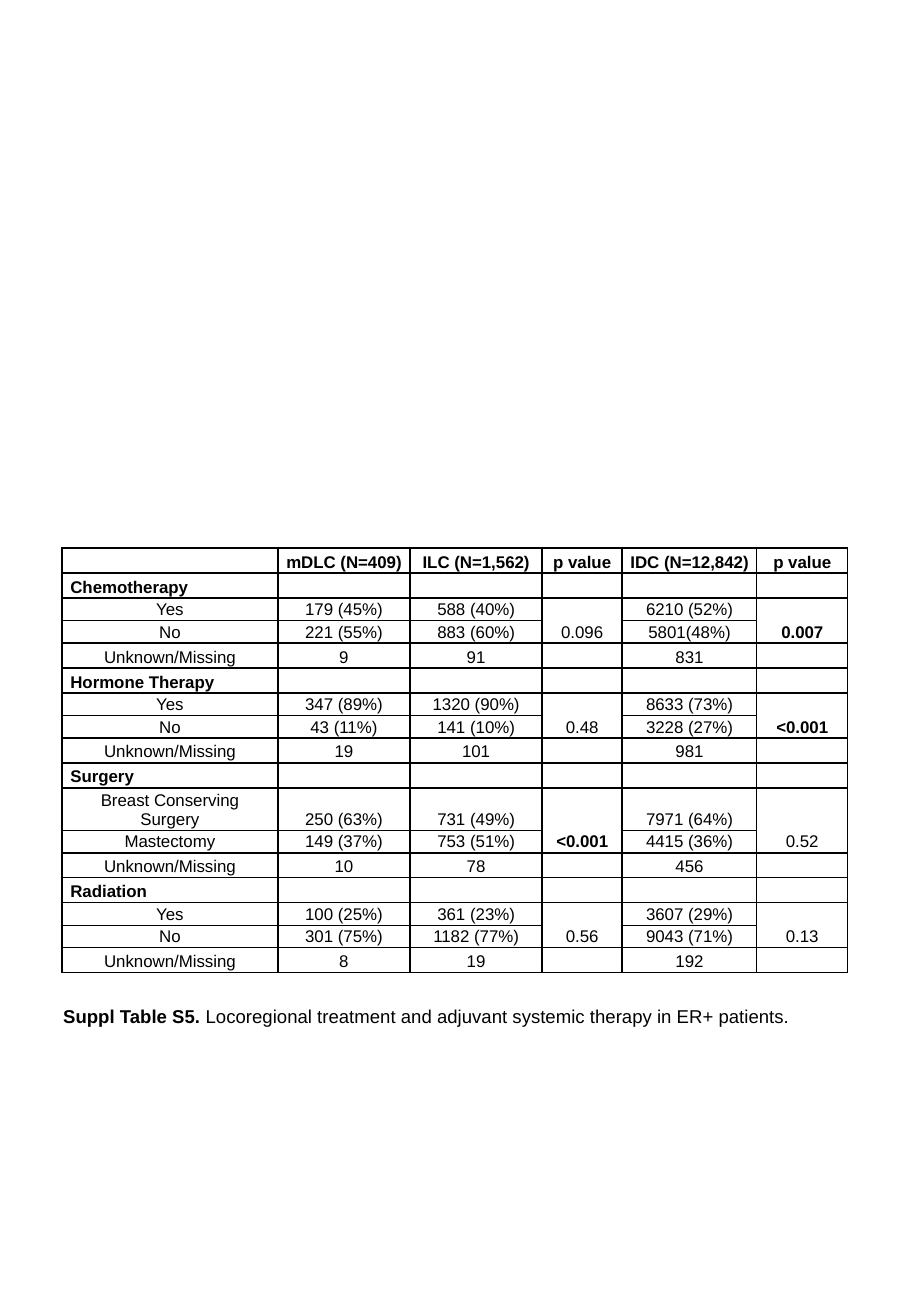
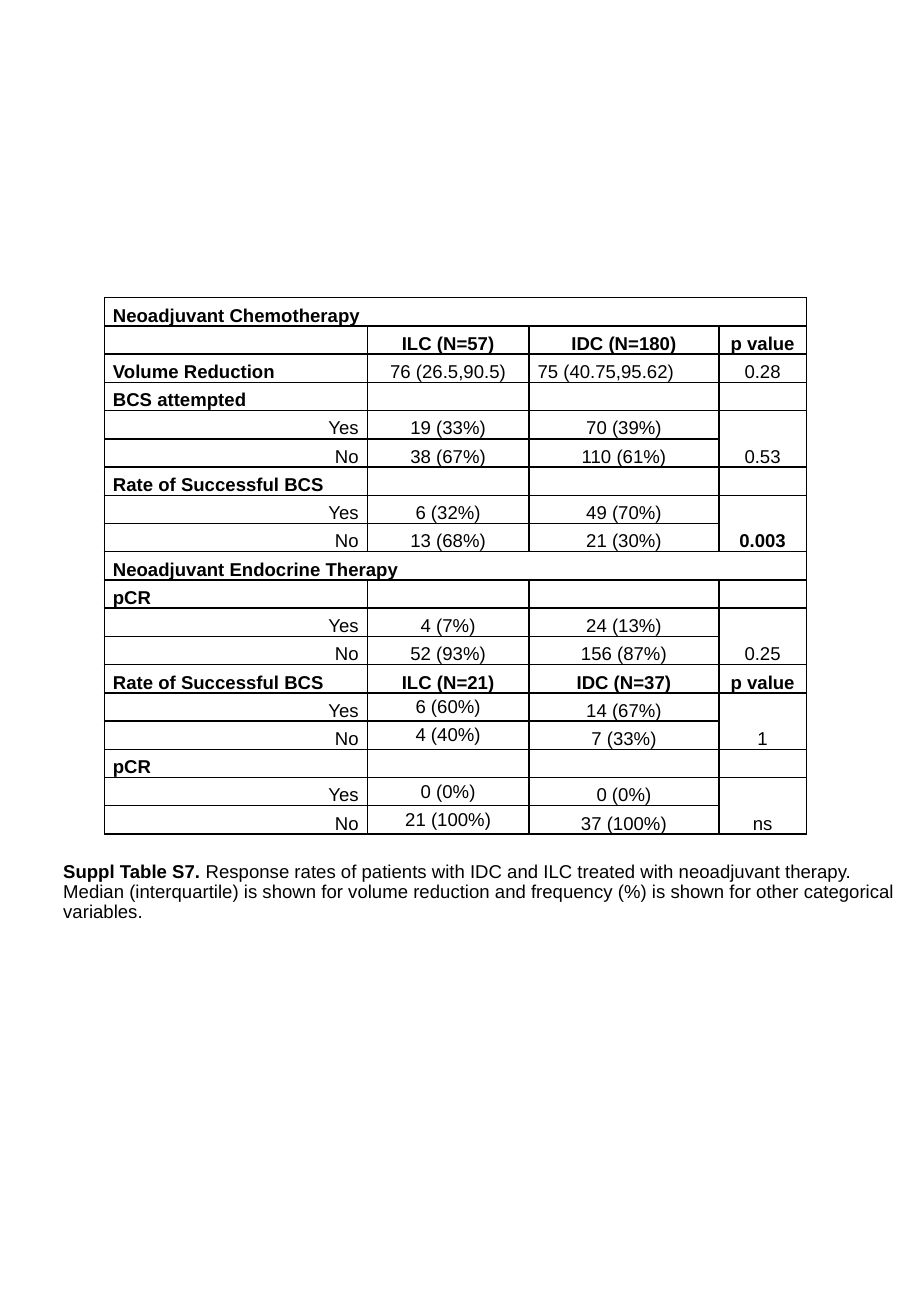
from lxml.etree import SubElement
from pptx import Presentation
from pptx.dml.color import RGBColor
from pptx.enum.text import MSO_ANCHOR as ANCHOR, MSO_AUTO_SIZE as AUTO_SIZE, PP_ALIGN as ALIGN
from pptx.oxml import parse_xml
from pptx.oxml.ns import nsdecls, qn
from pptx.util import Inches, Pt

FONT = "Arial"
INK = "000000"
BORDER = 1
CAPTION_SIZE = 11
LABEL_INSET = 0.07
VALUE_INSET = 0.06
TITLE_ONLY = 5

# In the rows below, "*" starts a bold cell and None joins a cell to the one
# above, or to the one on its left where the whole row is joined.
TREATMENT_HEAD = ["", "*mDLC (N=409)", "*ILC (N=1,562)", "*p value", "*IDC (N=12,842)", "*p value"]
TREATMENT_GROUPS = {
    "Chemotherapy": [
        ["Yes", "179 (45%)", "588 (40%)", "0.096", "6210 (52%)", "*0.007"],
        ["No", "221 (55%)", "883 (60%)", None, "5801(48%)", None],
        ["Unknown/Missing", "9", "91", "", "831", ""],
    ],
    "Hormone Therapy": [
        ["Yes", "347 (89%)", "1320 (90%)", "0.48", "8633 (73%)", "*<0.001"],
        ["No", "43 (11%)", "141 (10%)", None, "3228 (27%)", None],
        ["Unknown/Missing", "19", "101", "", "981", ""],
    ],
    "Surgery": [
        ["Breast Conserving Surgery", "250 (63%)", "731 (49%)", "*<0.001", "7971 (64%)", "0.52"],
        ["Mastectomy", "149 (37%)", "753 (51%)", None, "4415 (36%)", None],
        ["Unknown/Missing", "10", "78", "", "456", ""],
    ],
    "Radiation": [
        ["Yes", "100 (25%)", "361 (23%)", "0.56", "3607 (29%)", "0.13"],
        ["No", "301 (75%)", "1182 (77%)", None, "9043 (71%)", None],
        ["Unknown/Missing", "8", "19", "", "192", ""],
    ],
}
RESPONSE_ROWS = [
    ["*Neoadjuvant Chemotherapy", None, None, None],
    ["", "*ILC (N=57)", "*IDC (N=180)", "*p value"],
    ["*Volume Reduction", "76 (26.5,90.5)", "75 (40.75,95.62)", "0.28"],
    ["*BCS attempted", "", "", ""],
    ["Yes", "19 (33%)", "70 (39%)", "0.53"],
    ["No", "38 (67%)", "110 (61%)", None],
    ["*Rate of Successful BCS", "", "", ""],
    ["Yes", "6 (32%)", "49 (70%)", "*0.003"],
    ["No", "13 (68%)", "21 (30%)", None],
    ["*Neoadjuvant Endocrine Therapy", None, None, None],
    ["*pCR", "", "", ""],
    ["Yes", "4 (7%)", "24 (13%)", "0.25"],
    ["No", "52 (93%)", "156 (87%)", None],
    ["*Rate of Successful BCS", "*ILC (N=21)", "*IDC (N=37)", "*p value"],
    ["Yes", "6 (60%)", "14 (67%)", "1"],
    ["No", "4 (40%)", "7 (33%)", None],
    ["*pCR", "", "", ""],
    ["Yes", "0 (0%)", "0 (0%)", "ns"],
    ["No", "21 (100%)", "37 (100%)", None],
]


def color(hex_code):
    return RGBColor.from_string(hex_code)


def add_text(para, text, size=CAPTION_SIZE, bold=False, align=ALIGN.LEFT):
    para.alignment = align
    span = para.add_run()
    span.text = text
    span.font.name = FONT
    span.font.size = Pt(size)
    span.font.bold = bold
    span.font.color.rgb = color(INK)


def add_caption(page, top, label, text):
    box = page.shapes.title
    box.left, box.top, box.width, box.height = map(Inches, (0.42, top, 7.08, 0.63))
    frame = box.text_frame
    frame.word_wrap = True
    frame.auto_size = AUTO_SIZE.NONE
    frame.vertical_anchor = ANCHOR.TOP
    para = frame.paragraphs[0]
    para.line_spacing = 0.9
    add_text(para, label, bold=True)
    add_text(para, text)


def set_borders(cell):
    props = cell._tc.get_or_add_tcPr()
    for position, side in enumerate("LRTB"):
        props.insert(position, parse_xml(
            f'<a:ln{side} {nsdecls("a")} w="{Pt(BORDER)}"><a:solidFill>'
            f'<a:srgbClr val="{INK}"/></a:solidFill></a:ln{side}>'))


def fill_cell(cell, text, size, inset, label_align, is_label):
    cell.fill.background()
    cell.vertical_anchor = ANCHOR.BOTTOM
    cell.margin_left = cell.margin_right = Inches(LABEL_INSET if is_label else VALUE_INSET)
    cell.margin_top = cell.margin_bottom = Inches(inset)
    set_borders(cell)
    para = cell.text_frame.paragraphs[0]
    if text:
        bold = text.startswith("*")
        align = ALIGN.CENTER
        if is_label:
            align = ALIGN.LEFT if bold else label_align
        add_text(para, text.removeprefix("*"), size, bold, align)
    else:
        SubElement(para._p, qn("a:endParaRPr"), sz=str(size * 100))


def add_grid(page, box, rows, widths, weights, size, inset, label_align):
    """Draw a bordered table whose row heights share the box by weight."""
    left, top, width, height = box
    frame = page.shapes.add_table(len(rows), len(widths), *map(Inches, box))
    table = frame.table
    table.first_row = table.horz_banding = False
    for column, share in zip(table.columns, widths):
        column.width = Inches(width * share / sum(widths))
    for line, weight in zip(table.rows, weights):
        line.height = Inches(height * weight / sum(weights))
    for r, row in enumerate(rows):
        for c, text in enumerate(row):
            fill_cell(table.cell(r, c), text, size, inset, label_align, c == 0)
    for r, row in enumerate(rows):
        if not any(row[1:]) and None in row:
            table.cell(r, 0).merge(table.cell(r, len(row) - 1))
            continue
        for c, text in enumerate(row):
            if text is None:
                table.cell(r - 1, c).merge(table.cell(r, c))
    return table


def build_treatment_page(page):
    rows, weights = [TREATMENT_HEAD], [0.2]
    for name, lines in TREATMENT_GROUPS.items():
        rows += [["*" + name] + [""] * 5, *lines]
        weights += [0.2, 0.34 if name == "Surgery" else 0.18, 0.18, 0.2]
    add_caption(page, 8.24, "Suppl Table S5. ",
                "Locoregional treatment and adjuvant systemic therapy in ER+ patients.")
    add_grid(page, (0.51, 4.51, 6.47, 3.5), rows, [1.78, 1.09, 1.09, 0.66, 1.11, 0.75],
             weights, size=10, inset=0.01, label_align=ALIGN.CENTER)


def build_response_page(page):
    add_caption(page, 7.05, "Suppl Table S7. ",
                "Response rates of patients with IDC and ILC treated with neoadjuvant therapy. "
                "Median (interquartile) is shown for volume reduction and frequency (%) is shown "
                "for other categorical variables.")
    table = add_grid(page, (0.86, 2.45, 5.78, 4.42), RESPONSE_ROWS, [2.16, 1.33, 1.56, 0.72],
                     [1] * len(RESPONSE_ROWS), size=11, inset=0, label_align=ALIGN.RIGHT)
    volume_cell = table.cell(2, 2)
    volume_cell.margin_left = Inches(LABEL_INSET)
    volume_cell.text_frame.paragraphs[0].alignment = ALIGN.LEFT
    for r in (14, 15, 17, 18):
        table.cell(r, 1).vertical_anchor = ANCHOR.MIDDLE


def main():
    deck = Presentation()
    deck.slide_width, deck.slide_height = Inches(7.5), Inches(10.83)
    for build in (build_treatment_page, build_response_page):
        build(deck.slides.add_slide(deck.slide_layouts[TITLE_ONLY]))
    deck.save("out.pptx")


if __name__ == "__main__":
    main()
